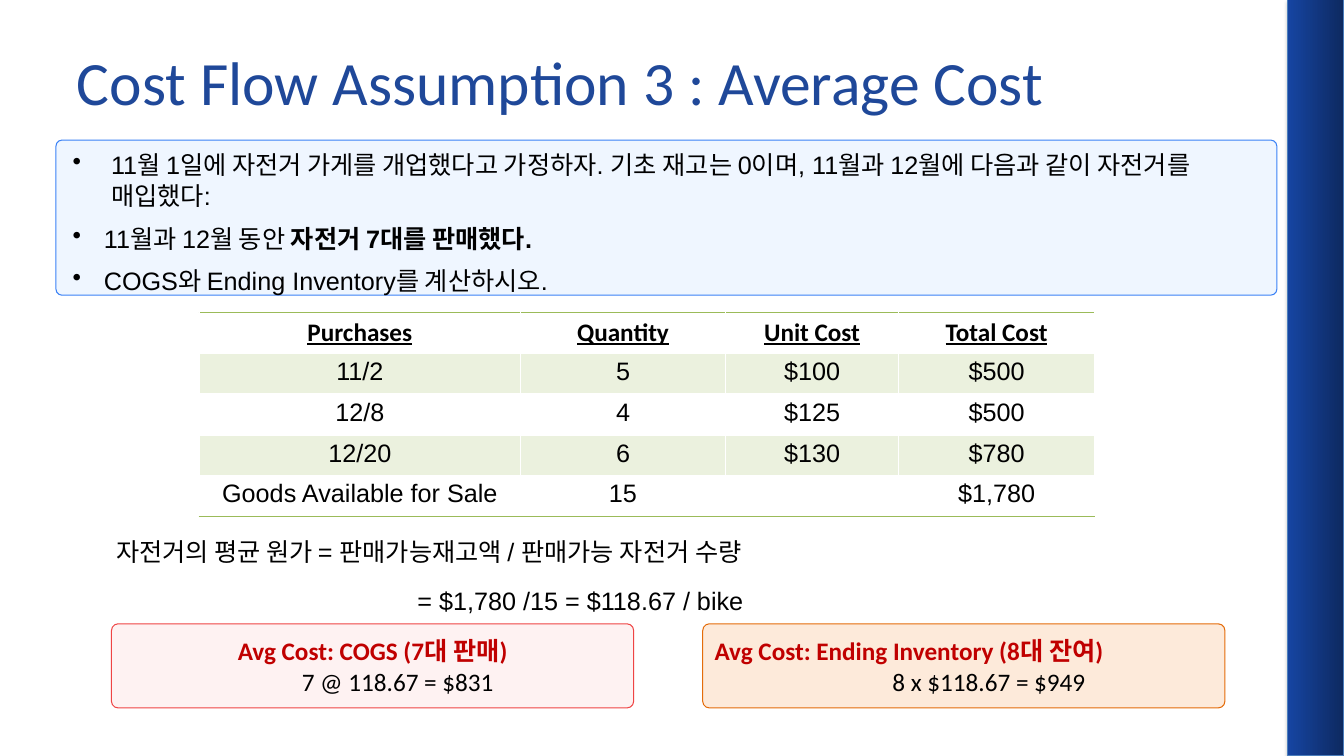
from lxml import etree
from pptx import Presentation
from pptx.dml.color import RGBColor
from pptx.enum.shapes import MSO_SHAPE
from pptx.enum.text import MSO_ANCHOR, PP_ALIGN
from pptx.oxml.ns import qn
from pptx.util import Cm, Pt

RECT, ROUND = MSO_SHAPE.RECTANGLE, MSO_SHAPE.ROUNDED_RECTANGLE
TOP, MIDDLE = MSO_ANCHOR.TOP, MSO_ANCHOR.MIDDLE
LEFT, CENTER = PP_ALIGN.LEFT, PP_ALIGN.CENTER
BLACK, RED, GREEN, BAND = "000000", "C00000", "9BBB59", "EBF1DE"

TITLE = "Cost Flow Assumption 3 : Average Cost"
FACTS = [
    (0.97, [("11월 1일에 자전거 가게를 개업했다고 가정하자. 기초 재고는 0이며, "
             "11월과 12월에 다음과 같이 자전거를 매입했다:", False)]),
    (0.79, [("11월과 12월 동안 ", False), ("자전거 7대를 판매했다.", True)]),
    (0.79, [("COGS와 Ending Inventory를 계산하시오.", False)]),
]
ROWS = [
    ("Purchases", "Quantity", "Unit Cost", "Total Cost"),
    ("11/2", "5", "$100", "$500"),
    ("12/8", "4", "$125", "$500"),
    ("12/20", "6", "$130", "$780"),
    ("Goods Available for Sale", "15", "", "$1,780"),
]
WIDTHS = (8.1, 5.16, 4.37, 4.93)
FORMULA = [
    (1.27, "자전거의 평균 원가\t= 판매가능재고액 / 판매가능 자전거 수량"),
    (8.86, "= $1,780 /15 = $118.67 / bike"),
]
RESULTS = [
    ("Avg Cost: COGS (7대 판매)", "7 @ 118.67 = $831", CENTER, "FEF2F2", "EF4444"),
    ("Avg Cost: Ending Inventory (8대 잔여)", "8 x $118.67 = $949", LEFT,
     "FDEADA", "E46C0A"),
]


def color(code):
    return RGBColor.from_string(code)


def style(para, face, size=18, code=BLACK, bold=False, under=False):
    for run in para.runs:
        font = run.font
        font.name, font.size = face, Pt(size)
        font.bold, font.underline = bold, under
        font.color.rgb = color(code)


def indent(para, left, hang=0):
    props = para._p.get_or_add_pPr()
    props.set("marL", str(Cm(left)))
    props.set("indent", str(-Cm(hang)))
    return props


def panel(slide, kind, box, fill, line):
    shape = slide.shapes.add_shape(kind, *map(Cm, box))
    shape.shadow.inherit = False
    if fill:
        shape.fill.solid()
        shape.fill.fore_color.rgb = color(fill)
    shape.line.color.rgb = color(line)
    shape.line.width = Pt(0.75)
    return shape


def text_box(slide, box, anchor=TOP):
    frame = slide.shapes.add_textbox(*map(Cm, box)).text_frame
    frame.word_wrap = True
    frame.vertical_anchor = anchor
    return frame


def border(cell, side):
    line = etree.Element(qn("a:" + side), w=str(Pt(1)))
    fill = etree.SubElement(line, qn("a:solidFill"))
    etree.SubElement(fill, qn("a:srgbClr"), val=GREEN)
    cell._tc.get_or_add_tcPr().insert(0, line)


def add_bar(slide):
    bar = panel(slide, RECT, (32.45, 0, 1.42, 19.05), None, "4B7EBC")
    bar.fill.gradient()
    bar.fill.gradient_angle = 180
    for stop, code in zip(bar.fill.gradient_stops, ("0D2960", "1645A2")):
        stop.color.rgb = color(code)
    effects = bar._element.spPr.find(qn("a:effectLst"))
    shade = etree.SubElement(effects, qn("a:outerShdw"), blurRad=str(Pt(3.1)),
                             dist=str(Pt(1.8)), dir="5400000", rotWithShape="0")
    tint = etree.SubElement(shade, qn("a:srgbClr"), val=BLACK)
    etree.SubElement(tint, qn("a:alpha"), val="35000")


def add_title(slide):
    frame = text_box(slide, (1.69, 0.46, 30.48, 3.18), MIDDLE)
    frame.text = TITLE
    style(frame.paragraphs[0], "Calibri", 44, "1F4899")


def add_facts(slide):
    card = panel(slide, ROUND, (1.41, 3.53, 30.77, 3.91), "EFF6FF", "3B82F6")
    card.adjustments[0] = 0.04
    frame = text_box(slide, (1.83, 3.73, 30.12, 3.61))
    frame.margin_left = frame.margin_right = 0
    frame.margin_top = frame.margin_bottom = 0
    frame.text = "\n".join("" for _ in FACTS)
    for para, (left, parts) in zip(frame.paragraphs, FACTS):
        props = indent(para, left, left)
        etree.SubElement(props, qn("a:buChar"), char="•")
        para.line_spacing, para.space_after = Pt(22.4), Pt(8)
        for words, bold in parts:
            para.add_run().text = words
        style(para, "Arial")
        for run, (_, bold) in zip(para.runs, parts):
            run.font.bold = bold


def add_costs(slide):
    high = 1.03
    frame = slide.shapes.add_table(
        len(ROWS), len(WIDTHS), Cm(5.02), Cm(7.87),
        Cm(sum(WIDTHS)), Cm(high * len(ROWS)))
    table = frame.table
    table.horz_banding = False
    for col, width in zip(table.columns, WIDTHS):
        col.width = Cm(width)
    for r, row in enumerate(ROWS):
        table.rows[r].height = Cm(high)
        head = r == 0
        for c, words in enumerate(row):
            cell = table.cell(r, c)
            cell.text = words
            para = cell.text_frame.paragraphs[0]
            para.alignment = CENTER
            style(para, "Calibri" if head else "Arial", bold=head, under=head)
            if not head:
                para.line_spacing = 1.15
                cell.margin_left = cell.margin_right = Cm(0.19)
                cell.margin_top = cell.margin_bottom = 0
            if r % 2:
                cell.fill.solid()
                cell.fill.fore_color.rgb = color(BAND)
            else:
                cell.fill.background()
            if head or r == len(ROWS) - 1:
                border(cell, "lnB")
            if head:
                border(cell, "lnT")


def add_formula(slide):
    frame = text_box(slide, (1.41, 13.28, 30.77, 2.31))
    frame.text = "\n".join(words for _, words in FORMULA)
    for para, (left, _) in zip(frame.paragraphs, FORMULA):
        props = indent(para, left)
        tabs = etree.SubElement(props, qn("a:tabLst"))
        etree.SubElement(tabs, qn("a:tab"), pos=str(Cm(7.62)), algn="l")
        para.line_spacing, para.space_after = 1.15, Pt(10)
        style(para, "Arial")


def add_results(slide):
    for i, (name, sum_up, align, fill, line) in enumerate(RESULTS):
        box = (2.81 + 14.9 * i, 15.72, 13.16, 2.12)
        card = panel(slide, ROUND, box, fill, line)
        card.adjustments[0] = 0.08
        frame = card.text_frame
        frame.word_wrap = True
        frame.vertical_anchor = MIDDLE
        frame.text = name + "\n" + sum_up
        head, body = frame.paragraphs
        head.alignment, body.alignment = align, CENTER
        indent(body, 1.27)
        style(head, "Calibri", code=RED, bold=True)
        style(body, "Calibri")


def main():
    deck = Presentation()
    deck.slide_width, deck.slide_height = Cm(33.87), Cm(19.05)
    slide = deck.slides.add_slide(deck.slide_layouts[6])
    for part in (add_bar, add_title, add_facts, add_costs, add_formula, add_results):
        part(slide)
    deck.save("out.pptx")


if __name__ == "__main__":
    main()
